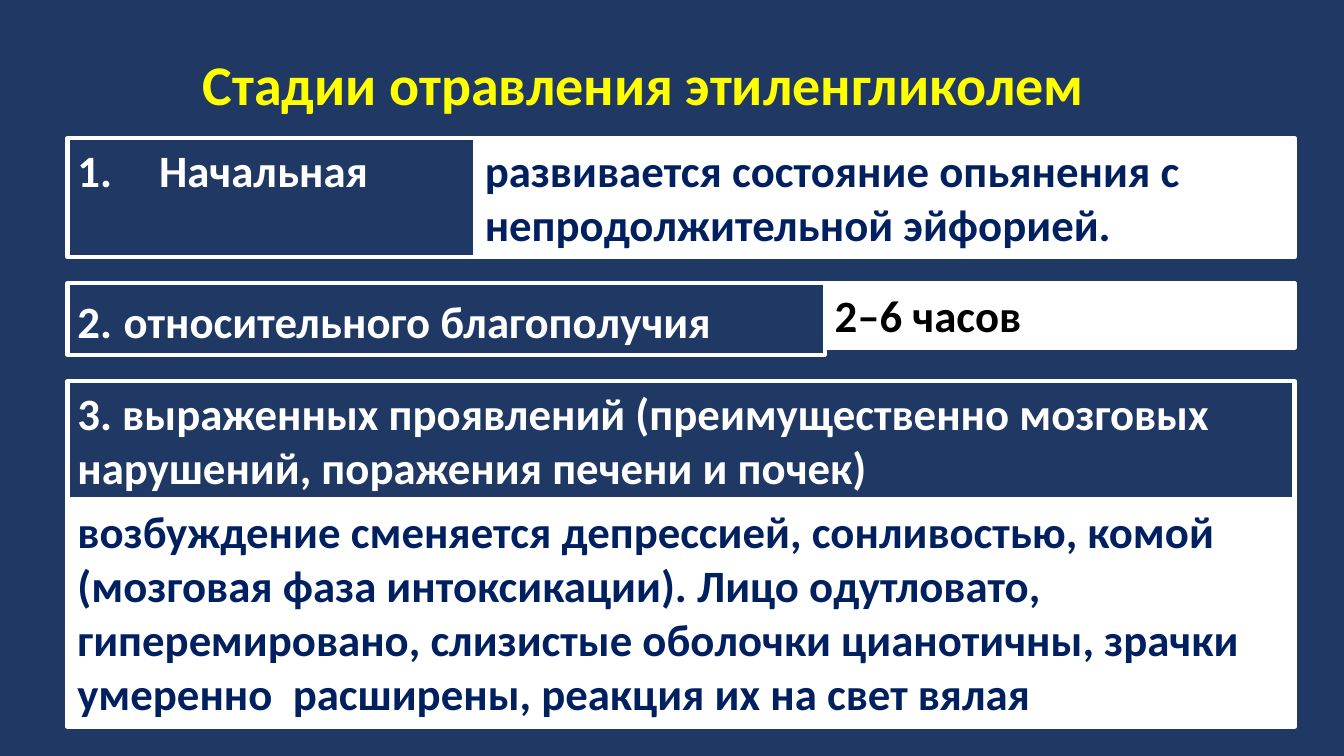
from pptx import Presentation
from pptx import util as u
from pptx.dml.color import RGBColor
from pptx.enum import shapes, text
from pptx.oxml.ns import qn
from lxml import etree

NAVY, INK, WHITE, YELLOW, BLACK = "203864", "002060", "FFFFFF", "FFFF00", "000000"
LEFT, RIGHT = 0.67, 12.84


def rgb(value):
    return RGBColor.from_string(value)


def write(p, content, size=32, color=WHITE, bold=True, font="Calibri"):
    r = p.add_run()
    r.text = content
    r.font.size = u.Pt(size)
    r.font.bold = bold
    r.font.name = font
    r.font.color.rgb = rgb(color)
    return r


def set_frame(tf, anchor):
    tf.word_wrap = True
    tf.auto_size = text.MSO_AUTO_SIZE.NONE
    tf.vertical_anchor = anchor
    return tf.paragraphs[0]


def add_title(slide, content):
    sp = slide.shapes.title
    sp.left, sp.top, sp.width, sp.height = map(u.Inches, (1.38, 0.44, 10, 0.77))
    p = set_frame(sp.text_frame, text.MSO_ANCHOR.TOP)
    p.alignment = text.PP_ALIGN.CENTER
    write(p, content, size=40, color=YELLOW)


def add_box(slide, left, top, right, height, fill=None):
    """Draw a white-edged box and return its first paragraph."""
    sp = slide.shapes.add_shape(
        shapes.MSO_SHAPE.RECTANGLE,
        *map(u.Inches, (left, top, right - left, height)))
    sp.shadow.inherit = False
    sp.line.color.rgb = rgb(WHITE)
    sp.line.width = u.Pt(3)
    if fill:
        sp.fill.solid()
        sp.fill.fore_color.rgb = rgb(fill)
    else:
        sp.fill.background()
    p = set_frame(sp.text_frame, text.MSO_ANCHOR.TOP)
    p.alignment = text.PP_ALIGN.LEFT
    return p


def number(p, indent):
    """Turn the paragraph into an automatically numbered item."""
    pPr = p._p.get_or_add_pPr()
    pPr.set("marL", str(u.Inches(indent)))
    pPr.set("indent", str(-u.Inches(indent)))
    etree.SubElement(pPr, qn("a:buFont"), typeface="+mj-lt")
    etree.SubElement(pPr, qn("a:buAutoNum"), type="arabicPeriod")


def main():
    prs = Presentation()
    prs.slide_width, prs.slide_height = u.Inches(13.33), u.Inches(7.5)
    slide = prs.slides.add_slide(prs.slide_layouts[5])
    slide.background.fill.solid()
    slide.background.fill.fore_color.rgb = rgb(NAVY)
    add_title(slide, "Стадии отравления этиленгликолем")

    # Stage names
    p = add_box(slide, LEFT, 1.37, 4.71, 1.18)
    number(p, 0.81)
    write(p, "Начальная")

    p = add_box(slide, LEFT, 2.81, 8.18, 0.71)
    write(p, "2.")
    write(p, " ", size=36)
    write(p, "относительного благополучия")

    p = add_box(slide, LEFT, 3.78, RIGHT, 1.18)
    write(p, "3. выраженных проявлений (преимущественно мозговых "
             "нарушений, поражения печени и почек)")

    # Stage descriptions
    descriptions = [
        (4.71, 1.37, 1.18, INK,
         "развивается состояние опьянения с непродолжительной эйфорией."),
        (8.18, 2.81, 0.64, BLACK, "2–6 часов"),
        (LEFT, 4.95, 2.26, INK,
         "возбуждение сменяется депрессией, сонливостью, комой "
         "(мозговая фаза интоксикации). Лицо одутловато, гиперемировано, "
         "слизистые оболочки цианотичны, зрачки умеренно  расширены, "
         "реакция их на свет вялая"),
    ]
    for left, top, height, color, content in descriptions:
        p = add_box(slide, left, top, RIGHT, height, fill=WHITE)
        write(p, content, color=color)

    prs.save("out.pptx")


if __name__ == "__main__":
    main()
